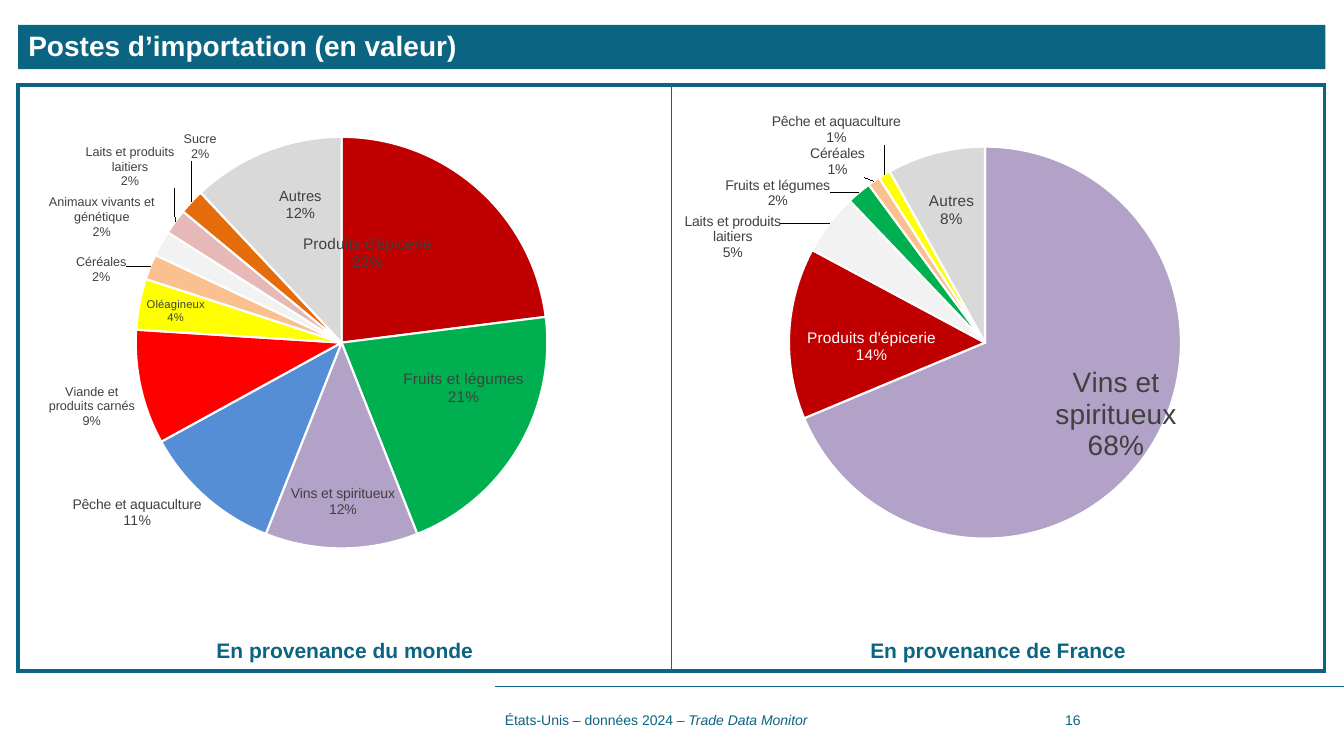
"""Build the slide comparing import categories from the world and from France."""
from lxml import etree
from pptx import Presentation
from pptx import util as u
from pptx.chart import data as chart_data
from pptx.dml.color import RGBColor
from pptx.enum import chart as kinds, shapes, text
from pptx.oxml import parse_xml
from pptx.oxml.ns import nsdecls, qn

COLORS = {
    "teal": "0B6482", "white": "FFFFFF", "label": "404040", "black": "000000",
    "violet": "B3A2C7", "crimson": "C00000", "pale": "F2F2F2", "green": "00B050",
    "peach": "FAC090", "yellow": "FFFF00", "pink": "E6B9B8", "blue": "558ED5",
    "orange": "E46C0A", "red": "FF0000", "grey": "D9D9D9",
}
TITLE = "Postes d’importation (en valeur)"
FOOTER = [("États-Unis – données 2024 – ", False), ("Trade Data Monitor", True)]
PAGE_NUMBER = "16"

# Each slice: category, value, fill, label position, label shift, label size, label colour
PIES = [
    {
        "caption": "En provenance du monde",
        "top": 60.5, "height": 368.6, "plot": (0.18, 0.1, 0.63, 0.8),
        "slices": [
            ("Produits d'épicerie", 0.23, "crimson", "CENTER", (-30, -9), 11, "label"),
            ("Fruits et légumes", 0.21, "green", "CENTER", (24, -5), 11, "label"),
            ("Vins et spiritueux", 0.12, "violet", "INSIDE_END", (1, -18), 10, "label"),
            ("Pêche et aquaculture", 0.11, "blue", "OUTSIDE_END", (0, -3), 10, "label"),
            ("Viande et produits carnés", 0.09, "red", "OUTSIDE_END", (0, -3), 9, "label"),
            ("Oléagineux", 0.04, "yellow", "INSIDE_END", (1, -5), 8, "label"),
            ("Céréales", 0.02, "peach", "OUTSIDE_END", (-13, 14), 9, "label"),
            ("Animaux vivants et génétique", 0.02, "pale", "OUTSIDE_END", (-1, -1), 9, "label"),
            ("Laits et produits laitiers", 0.02, "pink", "OUTSIDE_END", (3, -21), 9, "label"),
            ("Sucre", 0.02, "orange", "OUTSIDE_END", (21, -26), 9, "label"),
            ("Autres", 0.12, "grey", "INSIDE_END", (8, 22), 10.5, "label"),
        ],
    },
    {
        "caption": "En provenance de France",
        "top": 67.7, "height": 361.4, "plot": (0.18, 0.1, 0.6, 0.78),
        "slices": [
            ("Vins et spiritueux", 0.68, "violet", "INSIDE_END", (24, 10), 20, "label"),
            ("Produits d'épicerie", 0.14, "crimson", "CENTER", (-11, 6), 11, "white"),
            ("Laits et produits laitiers", 0.05, "pale", "OUTSIDE_END", (-31, 29), 10, "label"),
            ("Fruits et légumes", 0.02, "green", "OUTSIDE_END", (-18, 15), 10, "label"),
            ("Céréales", 0.01, "peach", "OUTSIDE_END", (-4, 1), 10, "label"),
            ("Pêche et aquaculture", 0.01, "yellow", "OUTSIDE_END", (14, -17), 10, "label"),
            ("Animaux vivants et génétique", 0, "pink", None, None, 10, "label"),
            ("Oléagineux", 0, "blue", None, None, 10, "label"),
            ("Viande et produits carnés", 0, "orange", None, None, 10, "label"),
            ("Sucre", 0, "red", None, None, 10, "label"),
            ("Autres", 0.08, "grey", "INSIDE_END", (-6, 24), 11, "label"),
        ],
    },
]
LEFT, HALF = 13, 466.6
TABLE_TOP, TABLE_HEIGHT = 60.5, 419
CAPTION_TOP, CAPTION_HEIGHT = 451.6, 25.2
FOOTER_TOP, FOOTER_HEIGHT = 500, 28.8
FOOTER_LEFT, RULE_Y = 353.5, 490.3


def rgb(name):
    return RGBColor.from_string(COLORS[name])


def style(font, color, **values):
    for name, value in {"name": "Arial", **values}.items():
        setattr(font, name, value)
    font.color.rgb = rgb(color)


def points(*lengths):
    return [u.Pt(length) for length in lengths]


def add_text(page, place, spans, align=text.PP_ALIGN.LEFT, anchor=text.MSO_ANCHOR.MIDDLE, **values):
    frame = page.shapes.add_textbox(*points(*place)).text_frame
    frame.word_wrap, frame.vertical_anchor = True, anchor
    para = frame.paragraphs[0]
    para.alignment = align
    for words, italic in spans:
        span = para.add_run()
        span.text = words
        style(span.font, "teal", italic=italic, **values)


def add_title(page):
    title = page.shapes.title
    title.left, title.top, title.width, title.height = points(LEFT, 17.7, 2 * HALF + 0.6, 31.7)
    title.fill.solid()
    title.fill.fore_color.rgb = rgb("teal")
    frame = title.text_frame
    frame.text = TITLE
    frame.auto_size, frame.vertical_anchor = text.MSO_AUTO_SIZE.NONE, text.MSO_ANCHOR.MIDDLE
    para = frame.paragraphs[0]
    para.alignment, para.line_spacing = text.PP_ALIGN.LEFT, 0.9
    style(para.runs[0].font, "white", size=u.Pt(20), bold=True)


def add_frame_table(page):
    place = points(LEFT, TABLE_TOP, 2 * HALF, TABLE_HEIGHT)
    table = page.shapes.add_table(1, 2, *place).table
    table.first_row = table.horz_banding = False
    for cell, thin_side in zip(table.rows[0].cells, "RL"):
        cell.fill.background()
        props = cell._tc.get_or_add_tcPr()
        for index, side in enumerate("LRTB"):
            width = u.Pt(1 if side == thin_side else 3)
            props.insert(index, parse_xml(
                f'<a:ln{side} {nsdecls("a")} w="{width}"><a:solidFill>'
                f'<a:srgbClr val="{COLORS["teal"]}"/></a:solidFill></a:ln{side}>'))


def add_separator(labels):
    labels.find(qn("c:showCatName")).set("val", "1")
    separator = etree.Element(qn("c:separator"))
    separator.text = "\n"
    labels.find(qn("c:showBubbleSize")).addnext(separator)


def manual_layout(head, values):
    sizes = "".join(f'<c:{key} val="{value:.4f}"/>' for key, value in zip("xywh", values))
    return parse_xml(f'<c:layout {nsdecls("c")}><c:manualLayout>{head}{sizes}'
                     '</c:manualLayout></c:layout>')


def place_plot(chart, plot):
    area = chart._chartSpace.find(qn("c:chart")).find(qn("c:plotArea"))
    for layout in area.findall(qn("c:layout")):
        area.remove(layout)
    head = '<c:layoutTarget val="inner"/><c:xMode val="edge"/><c:yMode val="edge"/>'
    area.insert(0, manual_layout(head, plot))
    area.getparent().addnext(parse_xml(
        f'<c:spPr {nsdecls("c", "a")}><a:noFill/><a:ln><a:noFill/></a:ln></c:spPr>'))


def finish_label(label, shift, height):
    if shift:
        add_separator(label)
        label.insert(1, manual_layout("", (shift[0] / HALF, shift[1] / height)))
    else:
        for child in list(label)[1:]:
            label.remove(child)
        etree.SubElement(label, qn("c:delete")).set("val", "1")


def add_pie(page, pie, left):
    numbers = chart_data.CategoryChartData(number_format="0%")
    numbers.categories = [row[0] for row in pie["slices"]]
    numbers.add_series("Series 1", [row[1] for row in pie["slices"]])
    place = points(left, pie["top"], HALF, pie["height"])
    chart = page.shapes.add_chart(kinds.XL_CHART_TYPE.PIE, *place, numbers).chart
    chart.has_title = chart.has_legend = False
    place_plot(chart, pie["plot"])
    style(chart.font, "black", size=u.Pt(8))
    chart.plots[0].vary_by_categories = True
    series = chart.plots[0].series[0]
    labels = series.data_labels
    labels.number_format, labels.number_format_is_linked = "0%", False
    style(labels.font, "label", size=u.Pt(10))
    for index, (_, _, fill, position, _, size, color) in enumerate(pie["slices"]):
        point = series.points[index]
        point.format.fill.solid()
        point.format.fill.fore_color.rgb = rgb(fill)
        point.format.line.color.rgb = rgb("white")
        point.format.line.width = u.Pt(1.5)
        style(point.data_label.font, color, size=u.Pt(size))
        if position:
            point.data_label.position = kinds.XL_LABEL_POSITION[position]
    group = series._element.find(qn("c:dLbls"))
    add_separator(group)
    for label, row in zip(group.findall(qn("c:dLbl")), pie["slices"]):
        finish_label(label, row[4], pie["height"])


def main():
    deck = Presentation()
    deck.slide_width, deck.slide_height = points(960, 540)
    page = deck.slides.add_slide(deck.slide_layouts[5])
    rule = page.shapes.add_connector(
        shapes.MSO_CONNECTOR.STRAIGHT, *points(960, RULE_Y, FOOTER_LEFT, RULE_Y))
    rule.line.color.rgb, rule.line.width = rgb("teal"), u.Pt(0.5)
    etree.SubElement(rule._element.spPr, qn("a:effectLst"))
    add_frame_table(page)
    add_title(page)
    for column, pie in enumerate(PIES):
        left = LEFT + column * HALF
        add_pie(page, pie, left)
        add_text(page, (left, CAPTION_TOP, HALF, CAPTION_HEIGHT), [(pie["caption"], False)],
                 text.PP_ALIGN.CENTER, text.MSO_ANCHOR.TOP, size=u.Pt(15), bold=True)
    add_text(page, (FOOTER_LEFT, FOOTER_TOP, 391, FOOTER_HEIGHT), FOOTER, size=u.Pt(10))
    add_text(page, (753.8, FOOTER_TOP, 71.3, FOOTER_HEIGHT), [(PAGE_NUMBER, False)], size=u.Pt(10))
    deck.save("out.pptx")


if __name__ == "__main__":
    main()
